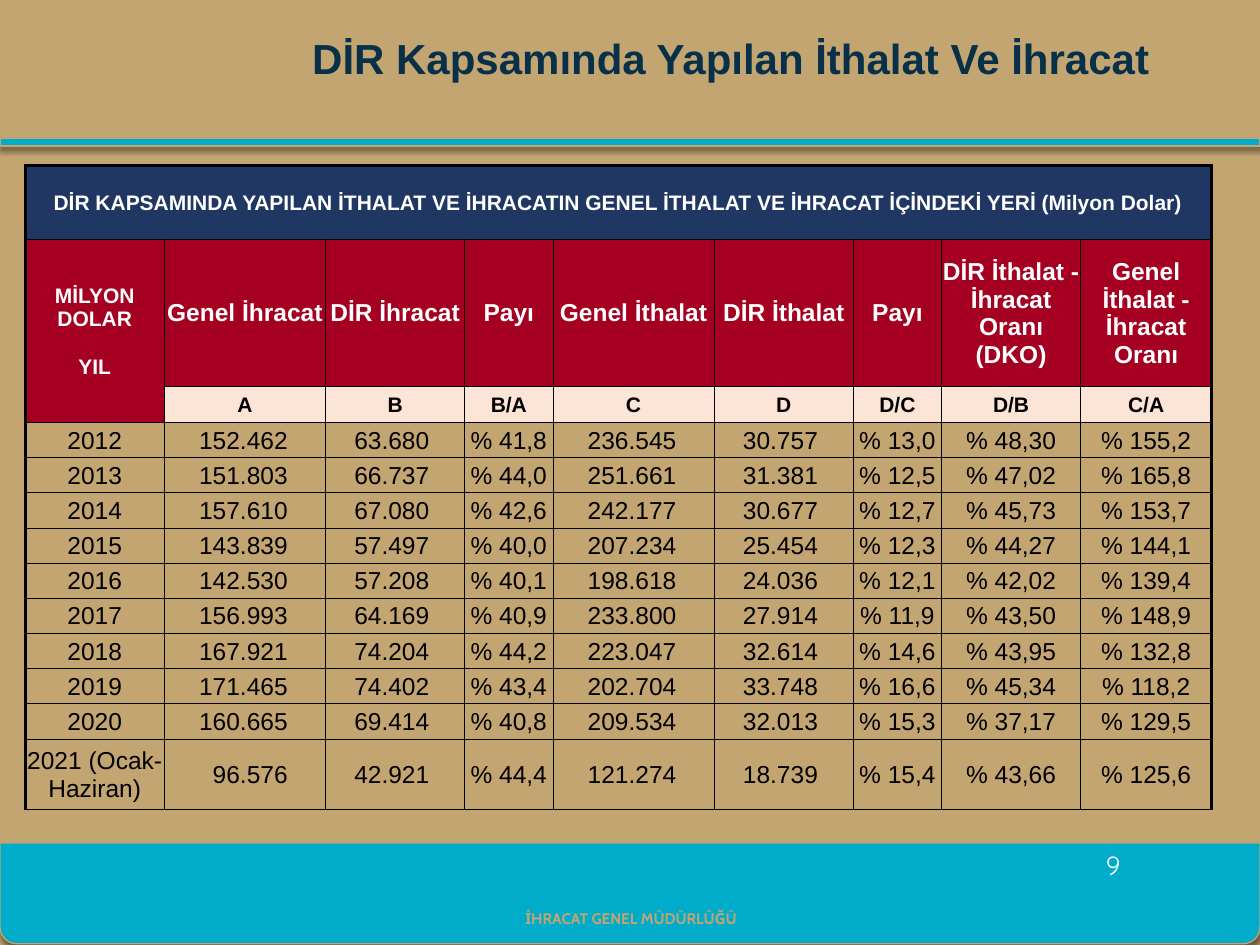
from dataclasses import dataclass
from typing import Optional

from lxml import etree
from pptx import Presentation
from pptx.dml.color import RGBColor
from pptx.enum.shapes import MSO_SHAPE
from pptx.enum.text import MSO_ANCHOR, MSO_AUTO_SIZE, PP_ALIGN
from pptx.oxml import parse_xml
from pptx.oxml.ns import nsdecls
from pptx.slide import Slide
from pptx.table import Table
from pptx.text.text import TextFrame
from pptx.util import Pt

RECT, ROUND = MSO_SHAPE.RECTANGLE, MSO_SHAPE.ROUND_2_SAME_RECTANGLE
TOP, MIDDLE = MSO_ANCHOR.TOP, MSO_ANCHOR.MIDDLE
CENTER, RIGHT = PP_ALIGN.CENTER, PP_ALIGN.RIGHT
GROW, FIXED = MSO_AUTO_SIZE.SHAPE_TO_FIT_TEXT, MSO_AUTO_SIZE.NONE


@dataclass(frozen=True)
class Theme:
    sand: str = "C3A572"
    teal: str = "00ACC9"
    ink: str = "083048"
    navy: str = "203764"
    red: str = "A50021"
    peach: str = "FCE4D6"
    black: str = "000000"
    white: str = "FFFFFF"
    title: float = 24
    page: float = 15
    body: float = 14
    small: float = 12
    foot: float = 8.8
    thin: float = 0.5
    thick: float = 2


@dataclass(frozen=True)
class Band:
    shape: MSO_SHAPE
    top: float
    height: float
    turn: float = 0


@dataclass(frozen=True)
class Font:
    size: float
    color: str
    bold: bool = False
    name: str = "Arial"


@dataclass(frozen=True)
class Label:
    text: str
    left: float
    top: float
    width: float
    height: float
    font: Font
    anchor: MSO_ANCHOR = MIDDLE
    fit: MSO_AUTO_SIZE = FIXED


T = Theme()
WIDTH, HEIGHT = 720, 540
BANDS = [Band(ROUND, 481.7, 57.6, 180), Band(RECT, 79.2, 4.3)]
LABELS = [
    Label("İHRACAT GENEL MÜDÜRLÜĞÜ", 283.7, 514.8, 154, 20.2,
          Font(T.foot, T.sand, True, "Cabin")),
    Label("9", 552.2, 480.2, 167.8, 28.8,
          Font(T.page, T.white, name="Quicksand")),
    Label("DİR Kapsamında Yapılan İthalat Ve İhracat", 115.2, 15.1, 604.8, 36,
          Font(T.title, T.ink, True), TOP, GROW),
]

BANNER = ("DİR KAPSAMINDA YAPILAN İTHALAT VE İHRACATIN GENEL İTHALAT VE "
          "İHRACAT İÇİNDEKİ YERİ (Milyon Dolar)")
CORNER = "MİLYON DOLAR\nYIL"
HEADS = ["Genel İhracat", "DİR İhracat", "Payı", "Genel İthalat", "DİR İthalat",
         "Payı", "DİR İthalat - İhracat Oranı (DKO)",
         "Genel İthalat - İhracat Oranı"]
KEYS = ["A", "B", "B/A", "C", "D", "D/C", "D/B", "C/A"]
YEARS = [
    ("2012", "152.462", "63.680", "41,8", "236.545", "30.757", "13,0", "48,30", "155,2"),
    ("2013", "151.803", "66.737", "44,0", "251.661", "31.381", "12,5", "47,02", "165,8"),
    ("2014", "157.610", "67.080", "42,6", "242.177", "30.677", "12,7", "45,73", "153,7"),
    ("2015", "143.839", "57.497", "40,0", "207.234", "25.454", "12,3", "44,27", "144,1"),
    ("2016", "142.530", "57.208", "40,1", "198.618", "24.036", "12,1", "42,02", "139,4"),
    ("2017", "156.993", "64.169", "40,9", "233.800", "27.914", "11,9", "43,50", "148,9"),
    ("2018", "167.921", "74.204", "44,2", "223.047", "32.614", "14,6", "43,95", "132,8"),
    ("2019", "171.465", "74.402", "43,4", "202.704", "33.748", "16,6", "45,34", "118,2"),
    ("2020", "160.665", "69.414", "40,8", "209.534", "32.013", "15,3", "37,17", "129,5"),
    ("2021 (Ocak-Haziran)", "96.576", "42.921", "44,4", "121.274", "18.739", "15,4",
     "43,66", "125,6"),
]
COLS = [79.5, 92.2, 79.5, 50.4, 92.2, 79.5, 50.4, 79.5, 74.9]
ROWS = [42.6, 83.8, 20.7] + [20.1] * 9 + [40.3]
PAD = 0.7
INDENT = {1: 21.6, 2: 20.2, 4: 21.6, 5: 20.2}
RATES = {3, 6, 7, 8}


def rgb(code: str) -> RGBColor:
    return RGBColor.from_string(code)


def style(frame: TextFrame, font: Font, align: PP_ALIGN = CENTER) -> None:
    for para in frame.paragraphs:
        para.alignment = align
        for run in para.runs:
            run.font.name = font.name
            run.font.size = Pt(font.size)
            run.font.bold = font.bold
            run.font.color.rgb = rgb(font.color)


def draw_band(slide: Slide, band: Band) -> None:
    shape = slide.shapes.add_shape(
        band.shape, Pt(0), Pt(band.top), Pt(WIDTH), Pt(band.height))
    shape.rotation = band.turn
    shape.fill.solid()
    shape.fill.fore_color.rgb = rgb(T.teal)
    shape.line.color.rgb = rgb(T.sand)
    shape.line.width = Pt(0.75)
    shape.shadow.inherit = False
    shape.element.spPr.remove(shape.element.spPr[-1])
    shape.element.spPr.append(parse_xml(
        f'<a:effectLst {nsdecls("a")}><a:outerShdw blurRad="{Pt(3)}" '
        f'dist="{Pt(2)}" dir="5400000" rotWithShape="0">'
        f'<a:srgbClr val="{T.black}"><a:alpha val="45000"/></a:srgbClr>'
        '</a:outerShdw></a:effectLst>'))


def draw_label(slide: Slide, label: Label) -> None:
    box = slide.shapes.add_textbox(
        Pt(label.left), Pt(label.top), Pt(label.width), Pt(label.height))
    frame = box.text_frame
    frame.word_wrap = True
    frame.auto_size = label.fit
    frame.vertical_anchor = label.anchor
    frame.text = label.text
    style(frame, label.font)


def draw_cell(table: Table, row: int, col: int, text: str, font: Font,
              fill: Optional[str] = None, align: PP_ALIGN = CENTER) -> None:
    cell = table.cell(row, col)
    cell.text_frame.text = text
    cell.vertical_anchor = MIDDLE
    cell.margin_left = cell.margin_top = Pt(PAD)
    cell.margin_right = Pt(INDENT[col] if align == RIGHT else PAD)
    cell.margin_bottom = Pt(0)
    style(cell.text_frame, font, align)
    heavy = {"L": col == 0, "R": col == len(COLS) - 1 or row == 0,
             "T": row == 0, "B": False}
    props = cell._tc.get_or_add_tcPr()
    for side, bold in heavy.items():
        width = Pt(T.thick if bold else T.thin)
        line = parse_xml(f'<a:ln{side} {nsdecls("a")} w="{width}"><a:solidFill>'
                         f'<a:srgbClr val="{T.black}"/></a:solidFill></a:ln{side}>')
        etree.ElementBase.append(props, line)
    if fill:
        cell.fill.solid()
        cell.fill.fore_color.rgb = rgb(fill)
    else:
        cell.fill.background()


def draw_table(slide: Slide) -> None:
    table = slide.shapes.add_table(
        len(ROWS), len(COLS), Pt(14.4), Pt(94.3), Pt(sum(COLS)), Pt(sum(ROWS))).table
    table.first_row = table.horz_banding = False
    for column, width in zip(table.columns, COLS):
        column.width = Pt(width)
    for line, height in zip(table.rows, ROWS):
        line.height = Pt(height)

    small = Font(T.small, T.white, True)
    for col in range(len(COLS)):
        draw_cell(table, 0, col, "" if col else BANNER, small, T.navy)
    for row, text in ((1, CORNER), (2, "")):
        draw_cell(table, row, 0, text, small, T.red)
    table.cell(1, 0).text_frame.paragraphs[1].space_before = Pt(13.7)
    for col, (head, key) in enumerate(zip(HEADS, KEYS), 1):
        draw_cell(table, 1, col, head, Font(T.body, T.white, True), T.red)
        draw_cell(table, 2, col, key, Font(T.small, T.black, True), T.peach)
    for row, year in enumerate(YEARS, 3):
        for col, value in enumerate(year):
            text = f"% {value}" if col in RATES else value
            align = RIGHT if col in INDENT else CENTER
            draw_cell(table, row, col, text, Font(T.body, T.black), align=align)
    table.cell(0, 0).merge(table.cell(0, len(COLS) - 1))
    table.cell(1, 0).merge(table.cell(2, 0))


def main() -> None:
    deck = Presentation()
    deck.slide_width, deck.slide_height = Pt(WIDTH), Pt(HEIGHT)
    slide = deck.slides.add_slide(deck.slide_layouts[6])
    slide.background.fill.solid()
    slide.background.fill.fore_color.rgb = rgb(T.sand)
    for band in BANDS:
        draw_band(slide, band)
    for label in LABELS:
        draw_label(slide, label)
    draw_table(slide)
    deck.save("out.pptx")


if __name__ == "__main__":
    main()
